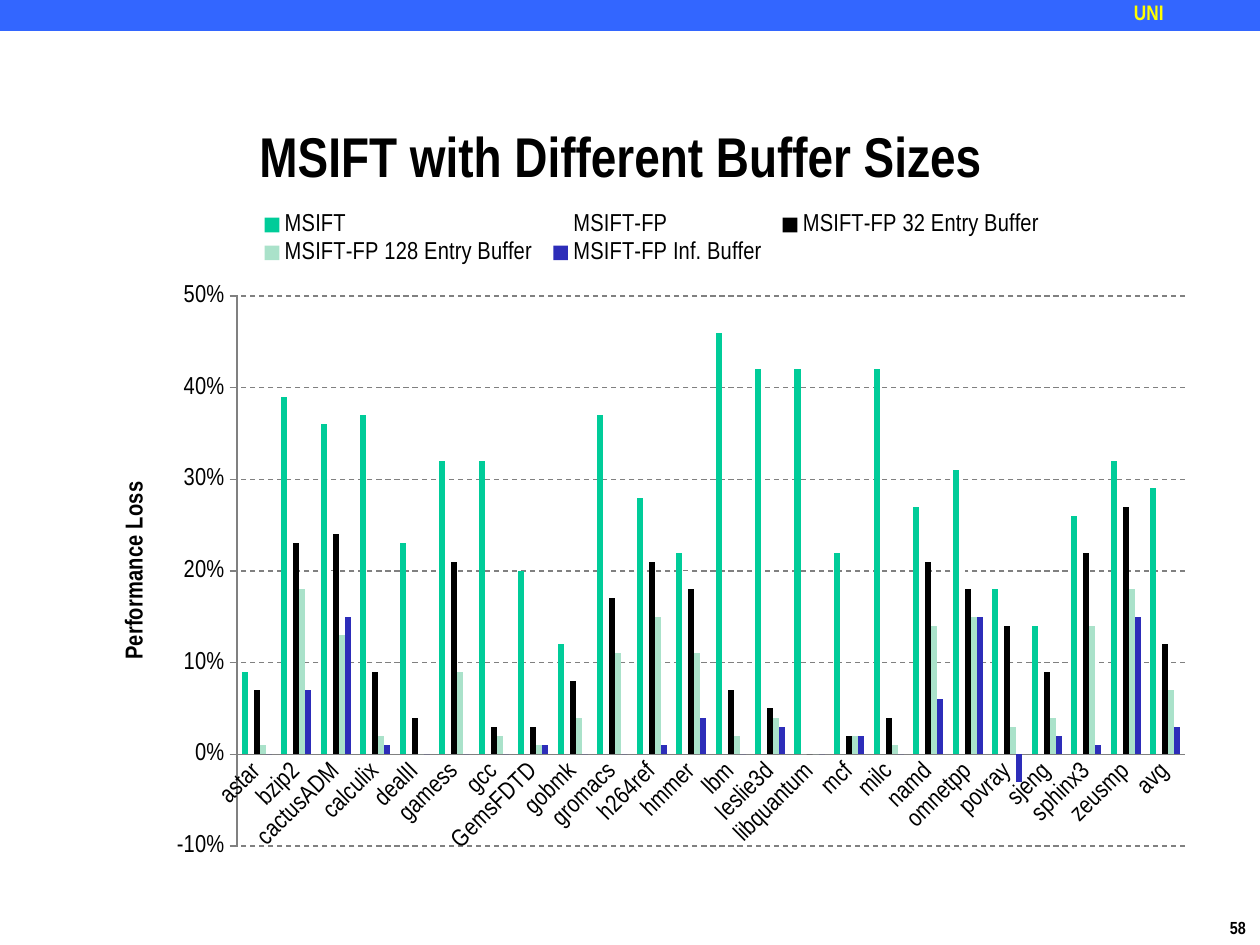
from dataclasses import dataclass

import pptx
import pptx.chart.data
import pptx.dml.color
import pptx.enum.chart
import pptx.enum.dml
import pptx.enum.shapes
import pptx.enum.text
import pptx.oxml
import pptx.oxml.ns
import pptx.util

RGBColor = pptx.dml.color.RGBColor
BLACK = RGBColor(0x00, 0x00, 0x00)
WHITE = RGBColor(0xFF, 0xFF, 0xFF)
GRAY = RGBColor(0x80, 0x80, 0x80)
BANNER_BLUE = RGBColor(0x33, 0x66, 0xFF)
YELLOW = RGBColor(0xFF, 0xFF, 0x00)
TEAL = RGBColor(0x00, 0xCC, 0x99)
MINT = RGBColor(0xAA, 0xE2, 0xCA)
INDIGO = RGBColor(0x2D, 0x2D, 0xB9)

FONT = "Arial Narrow"
PX_PER_INCH = 126


def px(length: int) -> pptx.util.Emu:
    return pptx.util.Emu(round(length * 914400 / PX_PER_INCH))


@dataclass(frozen=True)
class Box:
    left: int
    top: int
    width: int
    height: int

    def emu(self) -> tuple:
        return px(self.left), px(self.top), px(self.width), px(self.height)


@dataclass(frozen=True)
class BarSeries:
    name: str
    color: RGBColor
    percents: tuple


CHART_BOX = Box(95, 199, 1113, 672)
PLOT_BOX = Box(237, 296, 948, 550)
LEGEND_BOX = Box(252, 209, 800, 60)
AXIS_TITLE_BOX = Box(117, 477, 25, 180)

BENCHMARKS = (
    "astar bzip2 cactusADM calculix dealII gamess gcc GemsFDTD gobmk gromacs h264ref hmmer "
    "lbm leslie3d libquantum mcf milc namd omnetpp povray sjeng sphinx3 zeusmp avg"
).split()

SERIES = (
    BarSeries("MSIFT", TEAL, (9, 39, 36, 37, 23, 32, 32, 20, 12, 37, 28, 22,
                              46, 42, 42, 22, 42, 27, 31, 18, 14, 26, 32, 29)),
    BarSeries("MSIFT-FP", WHITE, (6, 23, 20, 7, 17, 24, 3, 4, 7, 23, 19, 20,
                                  7, 7, 0, 2, 4, 21, 21, 11, 7, 21, 23, 13)),
    BarSeries("MSIFT-FP 32 Entry Buffer", BLACK, (7, 23, 24, 9, 4, 21, 3, 3, 8, 17, 21, 18,
                                                  7, 5, 0, 2, 4, 21, 18, 14, 9, 22, 27, 12)),
    BarSeries("MSIFT-FP 128 Entry Buffer", MINT, (1, 18, 13, 2, 0, 9, 2, 1, 4, 11, 15, 11,
                                                  2, 4, 0, 2, 1, 14, 15, 3, 4, 14, 18, 7)),
    BarSeries("MSIFT-FP Inf. Buffer", INDIGO, (0, 7, 15, 1, 0, 0, 0, 1, 0, 0, 1, 4,
                                               0, 3, 0, 2, 0, 6, 15, -3, 2, 1, 15, 3)),
)


def style_font(font, size: int, color: RGBColor = BLACK, bold: bool = False) -> None:
    font.name = FONT
    font.size = pptx.util.Pt(size)
    font.bold = bold
    font.color.rgb = color


def add_run(para, text: str, size: int, color: RGBColor = BLACK) -> None:
    run = para.add_run()
    run.text = text
    style_font(run.font, size, color, bold=True)


def add_label(page, box: Box, text: str, size: int, color: RGBColor, margin: int, wrap: bool) -> None:
    frame = page.shapes.add_textbox(*box.emu()).text_frame
    frame.word_wrap = wrap
    frame.margin_left = frame.margin_right = px(margin)
    frame.margin_top = frame.margin_bottom = px(margin // 2)
    add_run(frame.paragraphs[0], text, size, color)


def add_banner(page) -> None:
    banner = page.shapes.add_shape(
        pptx.enum.shapes.MSO_SHAPE.RECTANGLE, *Box(0, 0, 1260, 31).emu())
    banner.shadow.inherit = False
    banner.fill.solid()
    banner.fill.fore_color.rgb = BANNER_BLUE
    banner.line.fill.background()


def set_title(page, text: str) -> None:
    title = page.shapes.title
    title.left, title.top, title.width, title.height = Box(126, 123, 990, 85).emu()
    frame = title.text_frame
    frame.auto_size = pptx.enum.text.MSO_AUTO_SIZE.NONE
    frame.vertical_anchor = pptx.enum.text.MSO_ANCHOR.TOP
    para = frame.paragraphs[0]
    para.alignment = pptx.enum.text.PP_ALIGN.CENTER
    para.line_spacing = 0.9
    add_run(para, text, 32)


def place_in_chart(element, box: Box, position: int, inner: bool = False, sized: bool = True) -> None:
    """Give a chart part a manual layout, as its child number `position`."""
    for old in element.findall(pptx.oxml.ns.qn("c:layout")):
        element.remove(old)
    settings = [("layoutTarget", "inner")] if inner else []
    settings += [("xMode", "edge"), ("yMode", "edge"),
                 ("x", round((box.left - CHART_BOX.left) / CHART_BOX.width, 4)),
                 ("y", round((box.top - CHART_BOX.top) / CHART_BOX.height, 4))]
    if sized:
        settings += [("w", round(box.width / CHART_BOX.width, 4)),
                     ("h", round(box.height / CHART_BOX.height, 4))]
    children = "".join(f'<c:{tag} val="{value}"/>' for tag, value in settings)
    element.insert(position, pptx.oxml.parse_xml(
        f'<c:layout {pptx.oxml.ns.nsdecls("c")}><c:manualLayout>{children}'
        "</c:manualLayout></c:layout>"))


def style_line(line, dashed: bool = False) -> None:
    line.color.rgb = GRAY
    line.width = pptx.util.Pt(0.75)
    if dashed:
        line.dash_style = pptx.enum.dml.MSO_LINE.DASH


def style_axes(chart) -> None:
    ticks = pptx.enum.chart.XL_TICK_MARK
    for axis in (chart.category_axis, chart.value_axis):
        style_font(axis.tick_labels.font, 14)
        style_line(axis.format.line)
        axis.minor_tick_mark = ticks.NONE

    chart.category_axis.major_tick_mark = ticks.NONE
    label_body = chart.category_axis._element.find(
        pptx.oxml.ns.qn("c:txPr")).find(pptx.oxml.ns.qn("a:bodyPr"))
    label_body.set("rot", "-2700000")
    label_body.set("vert", "horz")

    values = chart.value_axis
    values.major_tick_mark = ticks.OUTSIDE
    values.minimum_scale, values.maximum_scale, values.major_unit = -0.1, 0.5, 0.1
    values.tick_labels.number_format = "0%"
    values.tick_labels.number_format_is_linked = False
    values.has_major_gridlines = True
    style_line(values.major_gridlines.format.line, dashed=True)
    frame = values.axis_title.text_frame
    add_run(frame.paragraphs[0], "Performance Loss", 14)
    frame._txBody.bodyPr.set("rot", "-5400000")
    frame._txBody.bodyPr.set("vert", "horz")
    place_in_chart(values.axis_title._element, AXIS_TITLE_BOX, 1, sized=False)


def add_loss_chart(page) -> None:
    data = pptx.chart.data.CategoryChartData(number_format="0%")
    data.categories = BENCHMARKS
    for series in SERIES:
        data.add_series(series.name, [percent / 100 for percent in series.percents])
    chart = page.shapes.add_chart(
        pptx.enum.chart.XL_CHART_TYPE.COLUMN_CLUSTERED, *CHART_BOX.emu(), data).chart
    style_font(chart.font, 10)
    chart.has_title = False

    plot = chart.plots[0]
    plot.gap_width = 150
    plot.overlap = 0
    plot.vary_by_categories = False
    for bars, series in zip(plot.series, SERIES):
        bars.format.fill.solid()
        bars.format.fill.fore_color.rgb = series.color
        bars.invert_if_negative = False

    style_axes(chart)
    chart.has_legend = True
    chart.legend.position = pptx.enum.chart.XL_LEGEND_POSITION.TOP
    chart.legend.include_in_layout = False
    style_font(chart.legend.font, 14)
    place_in_chart(chart.legend._element, LEGEND_BOX, 1)
    plot_area = chart._chartSpace.chart.plotArea
    place_in_chart(plot_area, PLOT_BOX, 0, inner=True)


def main() -> None:
    deck = pptx.Presentation()
    deck.slide_width, deck.slide_height = px(1260), px(945)
    page = deck.slides.add_slide(deck.slide_layouts[5])
    add_label(page, Box(1218, 911, 43, 34), "58", 10, BLACK, margin=12, wrap=False)
    add_banner(page)
    add_label(page, Box(1134, 0, 126, 28), "UNI", 12, YELLOW, margin=0, wrap=True)
    add_loss_chart(page)
    set_title(page, "MSIFT with Different Buffer Sizes")
    deck.save("out.pptx")


if __name__ == "__main__":
    main()
